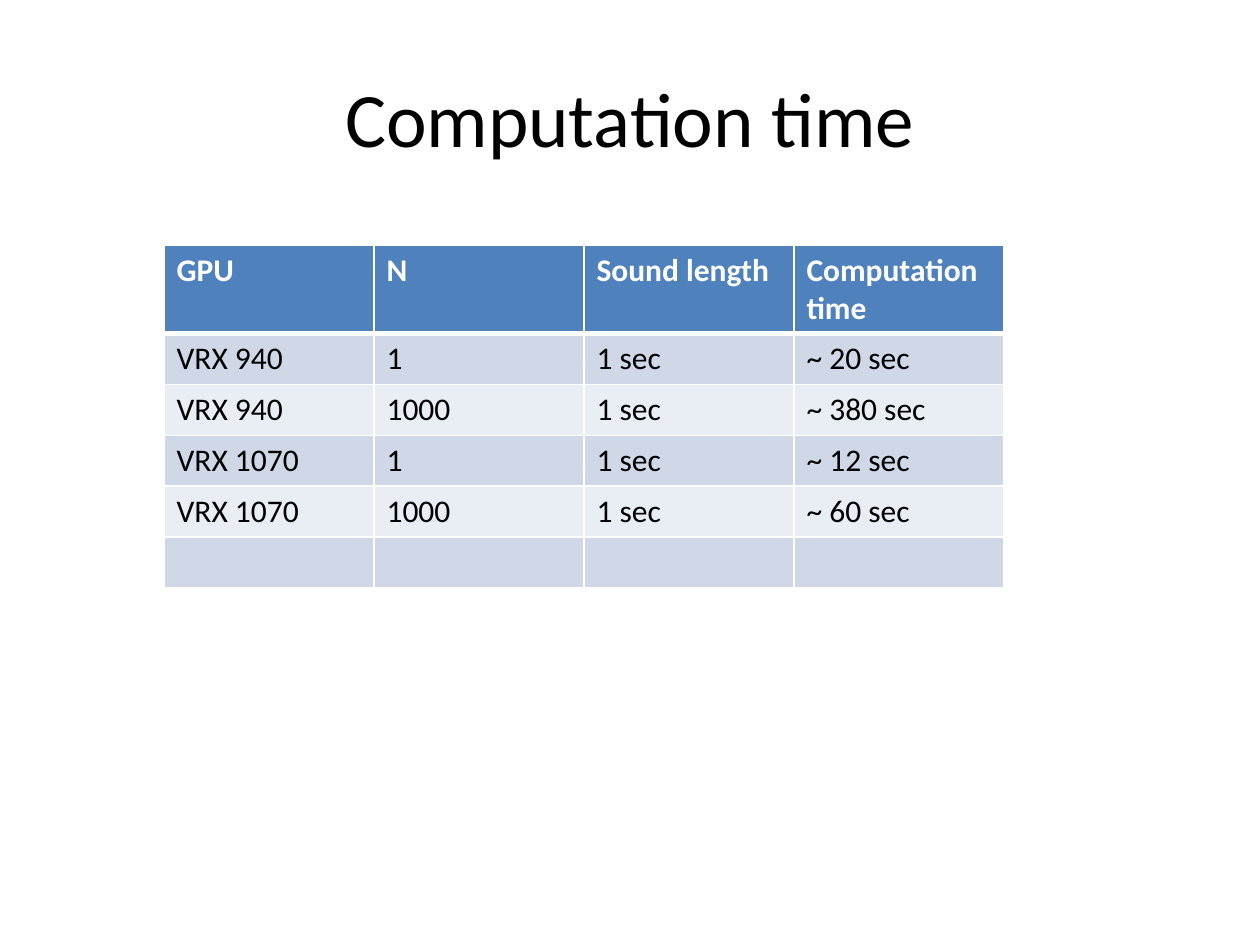
from lxml.etree import SubElement
from pptx import Presentation
from pptx.dml.color import RGBColor
from pptx.enum.text import MSO_ANCHOR, PP_ALIGN
from pptx.oxml.ns import qn
from pptx.util import Emu, Pt

PX_PER_INCH = 126
FONT = "Calibri"
WHITE, BLACK, BLUE = "FFFFFF", "000000", "4F81BD"
BANDS = ("D0D8E8", "E9EDF4")
HEADER = ("GPU", "N", "Sound length", "Computation time")
TIMINGS = (
    ("VRX 940", "1", "1 sec", "~ 20 sec"),
    ("VRX 940", "1000", "1 sec", "~ 380 sec"),
    ("VRX 1070", "1", "1 sec", "~ 12 sec"),
    ("VRX 1070", "1000", "1 sec", "~ 60 sec"),
    ("", "", "", ""),
)


def px(length):
    """Turn whole pixels into EMU."""
    return Emu(round(length * 914400 / PX_PER_INCH))


def color(code):
    """Turn a hex string into a colour."""
    return RGBColor.from_string(code)


def write(frame, text, size=18, fill=BLACK, bold=False, align=PP_ALIGN.LEFT):
    """Write one formatted paragraph into a text frame."""
    para = frame.paragraphs[0]
    para.alignment = align
    para.font.size = Pt(size)
    if text:
        span = para.add_run()
        span.text = text
        span.font.name = FONT
        span.font.size = Pt(size)
        span.font.bold = bold
        span.font.color.rgb = color(fill)


def add_title(page, text, left, top, width, height):
    """Add the centred slide title."""
    box = page.shapes.add_textbox(px(left), px(top), px(width), px(height))
    box.text_frame.word_wrap = True
    box.text_frame.vertical_anchor = MSO_ANCHOR.MIDDLE
    write(box.text_frame, text, size=44, align=PP_ALIGN.CENTER)


def add_border(cell, side, points):
    """Draw a white line on one side of a cell."""
    properties = cell._tc.get_or_add_tcPr()
    line = SubElement(properties, qn(f"a:ln{side}"), w=str(Pt(points)))
    SubElement(SubElement(line, qn("a:solidFill")), qn("a:srgbClr"), val=WHITE)


def fill_cell(cell, text, row):
    """Set borders, fill and text of a cell by its row."""
    is_header = row == 0
    widths = {"L": 1, "R": 1, "T": 3 if row == 1 else 1, "B": 3 if is_header else 1}
    for side, points in widths.items():
        add_border(cell, side, points)
    cell.fill.solid()
    cell.fill.fore_color.rgb = color(BLUE if is_header else BANDS[(row - 1) % 2])
    write(cell.text_frame, text, fill=WHITE if is_header else BLACK, bold=is_header)


def add_timing_table(page, rows, left, top, column_width, row_height):
    """Add the table of computation times."""
    columns = len(rows[0])
    table = page.shapes.add_table(
        len(rows), columns, px(left), px(top),
        px(column_width * columns), px(row_height * len(rows)),
    ).table
    for column in table.columns:
        column.width = px(column_width)
    for index, texts in enumerate(rows):
        table.rows[index].height = px(row_height)
        for cell, text in zip(table.rows[index].cells, texts):
            fill_cell(cell, text, index)


def main():
    """Build and save the slide."""
    deck = Presentation()
    deck.slide_width, deck.slide_height = px(1260), px(945)
    page = deck.slides.add_slide(deck.slide_layouts[6])
    add_title(page, "Computation time", 63, 38, 1134, 158)
    add_timing_table(page, (HEADER, *TIMINGS), 164, 245, 210, 51)
    deck.save("out.pptx")


if __name__ == "__main__":
    main()
